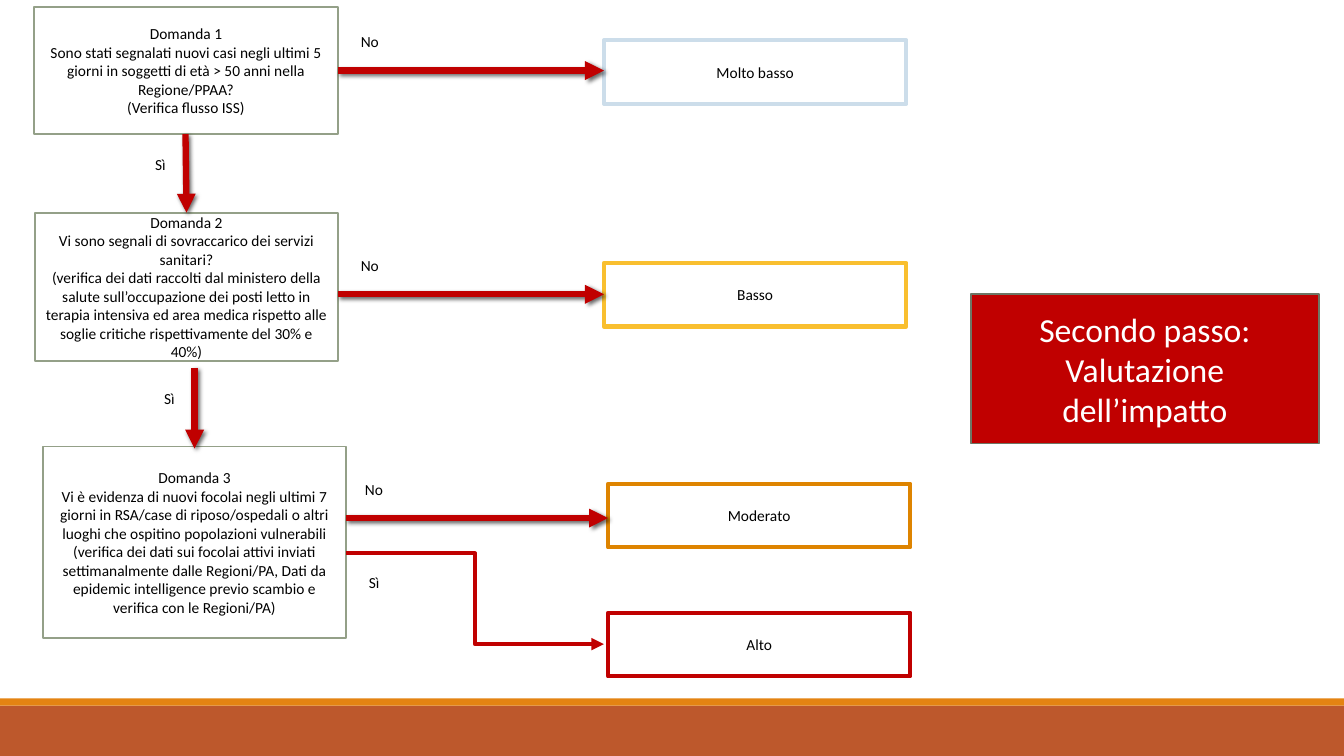
import pptx
import pptx.util
import pptx.dml.color
import pptx.enum.shapes
import pptx.enum.text
import pptx.oxml
import pptx.oxml.ns
import lxml.etree

Inches = pptx.util.Inches
Pt = pptx.util.Pt
SHAPE = pptx.enum.shapes.MSO_SHAPE
LINK = pptx.enum.shapes.MSO_CONNECTOR
ALIGN = pptx.enum.text.PP_ALIGN
ANCHOR = pptx.enum.text.MSO_ANCHOR
FIT = pptx.enum.text.MSO_AUTO_SIZE

HUES = {
    "white": "FFFFFF", "black": "000000", "red": "C00000",
    "sage": "94A088", "moss": "6D7665", "rust": "BD582C",
    "stripe": "E48312", "sky": "CCDDEA", "gold": "F9BF2F",
    "amber": "DE8400",
}

STEPS = [
    {
        "box": (0.34, 0.07, 3.01, 1.26),
        "lines": [
            "Domanda 1",
            "Sono stati segnalati nuovi casi negli ultimi 5 giorni in soggetti di età > 50 anni nella Regione/PPAA?",
            "(Verifica flusso ISS)",
        ],
        "exit": 0.7, "gap": 0.13,
        "result": (5.99, 0.4), "level": "Molto basso", "hue": "sky",
    },
    {
        "box": (0.35, 2.11, 3, 1.47),
        "lines": [
            "Domanda 2",
            "Vi sono segnali di sovraccarico dei servizi sanitari?",
            "(verifica dei dati raccolti dal ministero della salute sull’occupazione dei posti letto in terapia intensiva ed area medica rispetto alle soglie critiche rispettivamente del 30% e 40%)",
        ],
        "exit": 2.92, "gap": 0.13,
        "result": (5.99, 2.61), "level": "Basso", "hue": "gold",
    },
    {
        "box": (0.43, 4.43, 3, 1.9),
        "lines": [
            "Domanda 3",
            "Vi è evidenza di nuovi focolai negli ultimi 7 giorni in RSA/case di riposo/ospedali o altri luoghi che ospitino popolazioni vulnerabili (verifica dei dati sui focolai attivi inviati settimanalmente dalle Regioni/PA, Dati da epidemic intelligence previo scambio e verifica con le Regioni/PA)",
        ],
        "exit": 5.14, "gap": 0.09,
        "result": (6.03, 4.8), "level": "Moderato", "hue": "amber",
    },
]


def color(name):
    return pptx.dml.color.RGBColor.from_string(HUES[name])


def paint(shape, fill, edge=None, width=1.25):
    shape.fill.solid()
    shape.fill.fore_color.rgb = color(fill)
    if edge:
        shape.line.color.rgb = color(edge)
        shape.line.width = Pt(width)
    else:
        shape.line.fill.background()


def write(frame, lines, size=11, hue="black", align=ALIGN.CENTER):
    frame.text = "\n".join(lines)
    for para in frame.paragraphs:
        para.alignment = align
        para.font.name = "Calibri"
        para.font.size = Pt(size)
        para.font.color.rgb = color(hue)


def block(slide, box, fill, edge=None, width=1.25, lines=()):
    shape = slide.shapes.add_shape(SHAPE.RECTANGLE, *map(Inches, box))
    shape.shadow.inherit = False
    paint(shape, fill, edge, width)
    if lines:
        shape.text_frame.word_wrap = True
        shape.text_frame.vertical_anchor = ANCHOR.MIDDLE
        write(shape.text_frame, lines)


def label(slide, left, top, text, width):
    box = slide.shapes.add_textbox(*map(Inches, (left, top, width, 0.29)))
    box.text_frame.word_wrap = False
    write(box.text_frame, [text], align=ALIGN.LEFT)
    box.text_frame.auto_size = FIT.SHAPE_TO_FIT_TEXT


def arrow(slide, start, end, kind=LINK.STRAIGHT, width=4.5, shade=True):
    link = slide.shapes.add_connector(kind, *map(Inches, (*start, *end)))
    link.line.color.rgb = color("red")
    link.line.width = Pt(width)
    tag = pptx.oxml.ns.qn
    tail = lxml.etree.SubElement(link.line._get_or_add_ln(), tag("a:tailEnd"))
    tail.set("type", "triangle")
    props = link._element.spPr
    glow = lxml.etree.SubElement(props, tag("a:effectLst"))
    if shade:
        cast = lxml.etree.SubElement(
            glow, tag("a:outerShdw"), blurRad=str(Pt(3)), dist=str(Pt(2)),
            dir="2700000", algn="tl", rotWithShape="0")
        tint = lxml.etree.SubElement(cast, tag("a:srgbClr"), val=HUES["black"])
        lxml.etree.SubElement(tint, tag("a:alpha"), val="60000")


def result(slide, spot, level, hue):
    block(slide, (*spot, 3, 0.63), "white", hue, 3, [level])


def step(slide, data):
    left, top, width, height = data["box"]
    right, level = left + width, data["exit"]
    block(slide, data["box"], "white", "sage", lines=data["lines"])
    result(slide, data["result"], data["level"], data["hue"])
    arrow(slide, (right, level), (data["result"][0], level))
    label(slide, right + data["gap"], level - 0.43, "No", 0.38)


def descend(slide, start, end):
    arrow(slide, start, end)
    label(slide, start[0] - 0.4, start[1] + 0.16, "Sì", 0.31)


def alert(slide, box):
    left, top, width, height = box
    spot = (left + 2.6, top + 0.59)
    result(slide, spot, "Alto", "red")
    arrow(slide, (left, top), (left + 2.56, top + 0.9), LINK.ELBOW, 3, False)
    label(slide, left + 0.13, top + 0.15, "Sì", 0.31)


def title(slide, box):
    head = slide.shapes.title
    head.left, head.top, head.width, head.height = map(Inches, box)
    paint(head, "red", "moss")
    frame = head.text_frame
    frame.word_wrap = True
    frame.auto_size = FIT.NONE
    frame.vertical_anchor = ANCHOR.MIDDLE
    write(frame, ["Secondo passo:", "Valutazione dell’impatto"], 24, "white")


def footer(slide, box):
    left, top, width, height = box
    block(slide, (left, top + 0.07, width, height - 0.07), "rust")
    block(slide, (left, top, width, 0.07), "stripe")


def main():
    deck = pptx.Presentation()
    deck.slide_width, deck.slide_height = Inches(13.33), Inches(7.5)
    slide = deck.slides.add_slide(deck.slide_layouts[5])
    footer(slide, (0, 6.93, 13.33, 0.57))
    title(slide, (9.63, 2.92, 3.45, 1.48))
    for data in STEPS:
        step(slide, data)
    descend(slide, (1.84, 1.33), (1.85, 2.11))
    descend(slide, (1.93, 3.65), (1.93, 4.45))
    alert(slide, (3.43, 5.49, 5.6, 1.22))
    deck.save("out.pptx")


if __name__ == "__main__":
    main()
